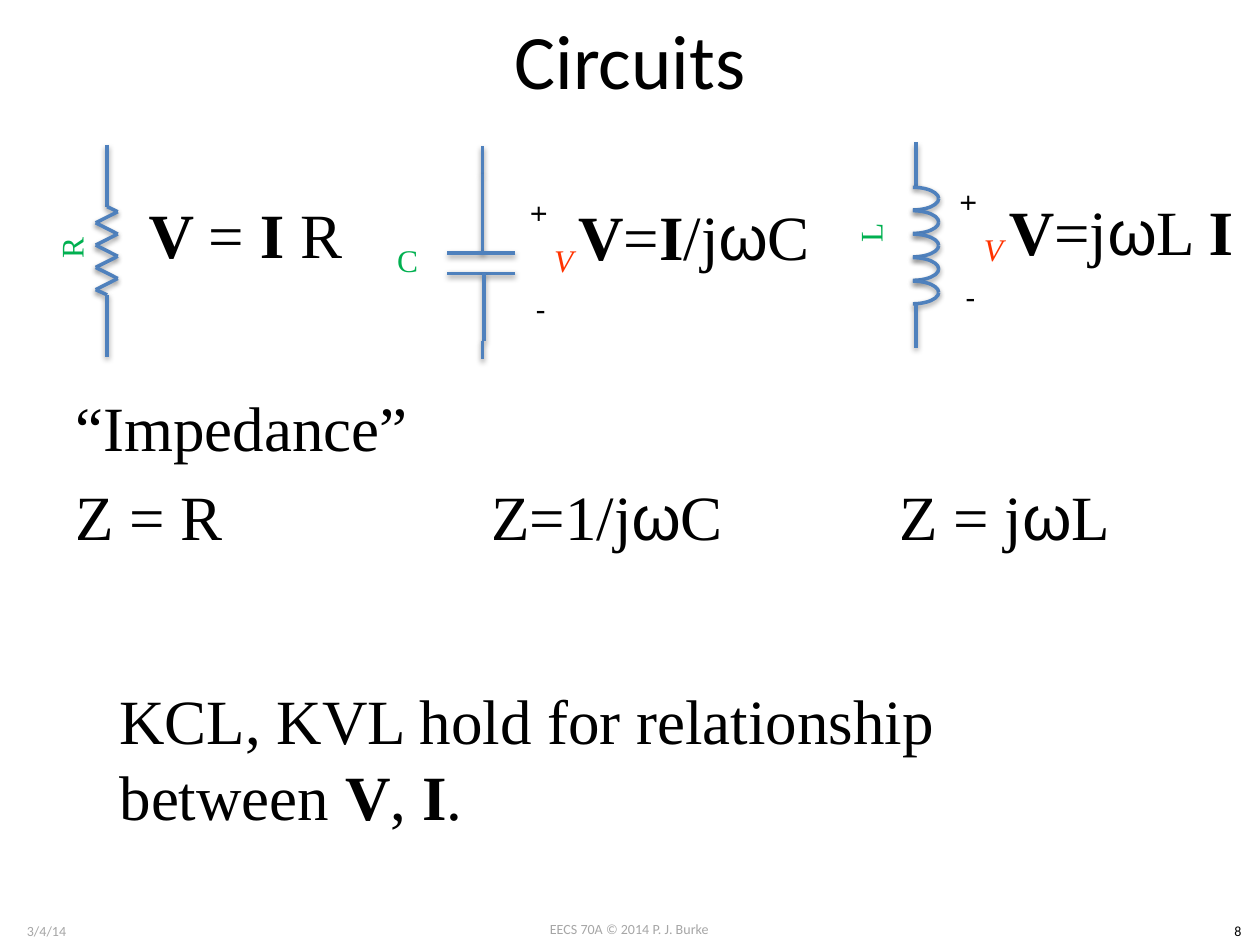
"""Build the slide that compares resistor, capacitor and inductor impedances."""
from dataclasses import dataclass
from itertools import pairwise

from lxml import etree
from pptx import Presentation
from pptx.dml.color import RGBColor
from pptx.enum.shapes import MSO_CONNECTOR, MSO_SHAPE
from pptx.enum.text import MSO_ANCHOR, MSO_AUTO_SIZE, PP_ALIGN
from pptx.oxml.ns import qn
from pptx.util import Pt

STRAIGHT = MSO_CONNECTOR.STRAIGHT
ARC = MSO_SHAPE.ARC
LEFT, CENTER = PP_ALIGN.LEFT, PP_ALIGN.CENTER
TOP, MIDDLE = MSO_ANCHOR.TOP, MSO_ANCHOR.MIDDLE
GROW, FIXED = MSO_AUTO_SIZE.SHAPE_TO_FIT_TEXT, MSO_AUTO_SIZE.NONE
TITLE_ONLY = 5


@dataclass(frozen=True)
class Theme:
    ink: str = "000000"
    muted: str = "A6A6A6"
    wire: str = "4F81BD"
    component: str = "00B050"
    voltage: str = "FF3300"
    sans: str = "Calibri"
    serif: str = "Times New Roman"
    greek: str = "Arial"
    title_size: float = 44
    formula_size: float = 36
    label_size: float = 18
    footer_size: float = 8
    wire_width: float = 2


THEME = Theme()
TITLE = {"name": THEME.sans, "size": Pt(THEME.title_size), "color": THEME.ink}
PLAIN = {"name": THEME.serif, "size": Pt(THEME.formula_size), "color": THEME.ink, "bold": False}
BOLD = PLAIN | {"bold": True}
GREEK = PLAIN | {"name": THEME.greek}
COMPONENT = PLAIN | {"size": Pt(THEME.label_size), "color": THEME.component}
VOLTAGE = COMPONENT | {"color": THEME.voltage, "italic": True}
SIGN = TITLE | {"size": Pt(THEME.label_size)}
NUMBER = TITLE | {"size": Pt(THEME.footer_size)}
FOOTER = NUMBER | {"color": THEME.muted}

FOOTERS = [
    ((275.8, 522.7, 167.8, 17.3), "EECS 70A © 2014 P. J. Burke", FOOTER),
    ((0, 523.4, 53.3, 17.3), "3/4/14", FOOTER),
    ((694.8, 523.4, 25.2, 17.3), "8", NUMBER),
]
FORMULAS = [
    ((77.8, 108, 140.4, 51), [("V ", BOLD), ("= ", PLAIN), ("I ", BOLD), ("R", PLAIN)]),
    ((323.3, 109.4, 146.9, 51),
     [("V", BOLD), ("=", PLAIN), ("I", BOLD), ("/j", PLAIN), ("ω", GREEK), ("C", PLAIN)]),
    ((569.5, 106.6, 146.9, 51),
     [("V", BOLD), ("=j", PLAIN), ("ω", GREEK), ("L ", PLAIN), ("I", BOLD)]),
    ((36, 218.2, 219.6, 51), [("“Impedance”", PLAIN)]),
    ((36, 269.3, 136.1, 51), [("Z = R", PLAIN)]),
    ((273.6, 269.3, 152.6, 51), [("Z=1/j", PLAIN), ("ω", GREEK), ("C", PLAIN)]),
    ((506.9, 269.3, 152.6, 51), [("Z = j", PLAIN), ("ω", GREEK), ("L", PLAIN)]),
    ((61.2, 385.9, 560.2, 94.3),
     [("KCL, KVL hold for relationship between ", PLAIN), ("V", BOLD), (", ", PLAIN),
      ("I", BOLD), (".", PLAIN)]),
]


class CircuitSlide:
    """Draw circuit elements and text on one slide in one theme."""

    def __init__(self, slide, theme):
        self.slide = slide
        self.theme = theme

    def add_runs(self, paragraph, runs, alignment):
        paragraph.alignment = alignment
        for text, style in runs:
            run = paragraph.add_run()
            run.text = text
            for name, value in style.items():
                if name == "color":
                    run.font.color.rgb = RGBColor.from_string(value)
                else:
                    setattr(run.font, name, value)

    def title(self, text, box):
        shape = self.slide.shapes.title
        for name, value in zip(("left", "top", "width", "height"), box):
            setattr(shape, name, Pt(value))
        shape.text_frame.vertical_anchor = MIDDLE
        self.add_runs(shape.text_frame.paragraphs[0], [(text, TITLE)], CENTER)

    def text(self, box, runs, alignment=LEFT, rotation=0, **frame_format):
        shape = self.slide.shapes.add_textbox(*map(Pt, box))
        shape.rotation = rotation
        settings = {"word_wrap": True, "auto_size": GROW, "vertical_anchor": TOP} | frame_format
        for name, value in settings.items():
            setattr(shape.text_frame, name, value)
        self.add_runs(shape.text_frame.paragraphs[0], runs, alignment)

    def label(self, box, text, style, rotation=0):
        self.text(box, [(text, style)], CENTER, rotation, auto_size=FIXED, vertical_anchor=MIDDLE)

    def stroke(self, shape):
        shape.line.color.rgb = RGBColor.from_string(self.theme.wire)
        shape.line.width = Pt(self.theme.wire_width)
        effects = etree.SubElement(shape.element.spPr, qn("a:effectLst"))
        shadow = etree.SubElement(effects, qn("a:outerShdw"), blurRad=str(Pt(3.1)),
                                  dist=str(Pt(1.6)), dir="5400000", rotWithShape="0")
        color = etree.SubElement(shadow, qn("a:srgbClr"), val=self.theme.ink)
        etree.SubElement(color, qn("a:alpha"), val="38000")

    def wire(self, *points):
        for start, end in pairwise(points):
            self.stroke(self.slide.shapes.add_connector(STRAIGHT, *map(Pt, start + end)))

    def arc(self, box, flipped):
        shape = self.slide.shapes.add_shape(ARC, *map(Pt, box))
        shape.fill.background()
        self.stroke(shape)
        if flipped:
            shape.element.spPr.find(qn("a:xfrm")).set("flipV", "1")

    def polarity(self, left, top):
        self.text((left + 2.9, top - 18, 23.8, 28.8), [("+", SIGN)], rotation=90, word_wrap=False)
        self.text((left + 4.7, top + 35.3, 20.2, 28.8), [("-", SIGN)], word_wrap=False)
        self.label((left, top, 55.4, 43.9), "V", VOLTAGE)

    def resistor(self):
        middle, left, right = 61.2, 54.7, 67.3
        zigzag = [(left if index % 2 else right, 121 + 6.36 * index) for index in range(8)]
        self.wire((middle, 82.8), (middle, 118.1), *zigzag, (middle, 168.5), (middle, 203.8))
        self.label((-2.2, 115.2, 85.7, 52.6), "R", COMPONENT, 270)

    def capacitor(self):
        middle, upper, lower = 275.8, 144.7, 156.2
        self.wire((middle, 83.5), (middle, 99.4), (middle, upper))
        for height in (upper, lower):
            self.wire((294.5, height), (255.6, height))
        self.wire((276.5, lower), (276.5, 195.1))
        self.wire((middle, 195.1), (middle, 205.2))
        self.label((190.1, 122.4, 85.7, 52.6), "C", COMPONENT)
        self.polarity(294.5, 126.7)

    def inductor(self):
        middle = 523.4
        self.wire((middle, 106.6), (middle, 81.4))
        for turn in range(5):
            for flipped in (False, True):
                self.arc((506.9, 107 + 13.4 * turn, 29.5, 13), flipped)
        self.wire((middle, 198.7), (middle, 173.5))
        self.label((454.3, 106.6, 85.7, 52.6), "L", COMPONENT, 270)
        self.polarity(540, 120.2)


def main():
    presentation = Presentation()
    presentation.slide_width, presentation.slide_height = Pt(720), Pt(540)
    slide = presentation.slides.add_slide(presentation.slide_layouts[TITLE_ONLY])
    circuit = CircuitSlide(slide, THEME)
    for box, text, style in FOOTERS:
        circuit.text(box, [(text, style)], CENTER)
    circuit.title("Circuits", (36, 0, 648, 67))
    circuit.inductor()
    circuit.capacitor()
    circuit.resistor()
    for box, runs in FORMULAS:
        circuit.text(box, runs)
    presentation.save("out.pptx")


if __name__ == "__main__":
    main()
